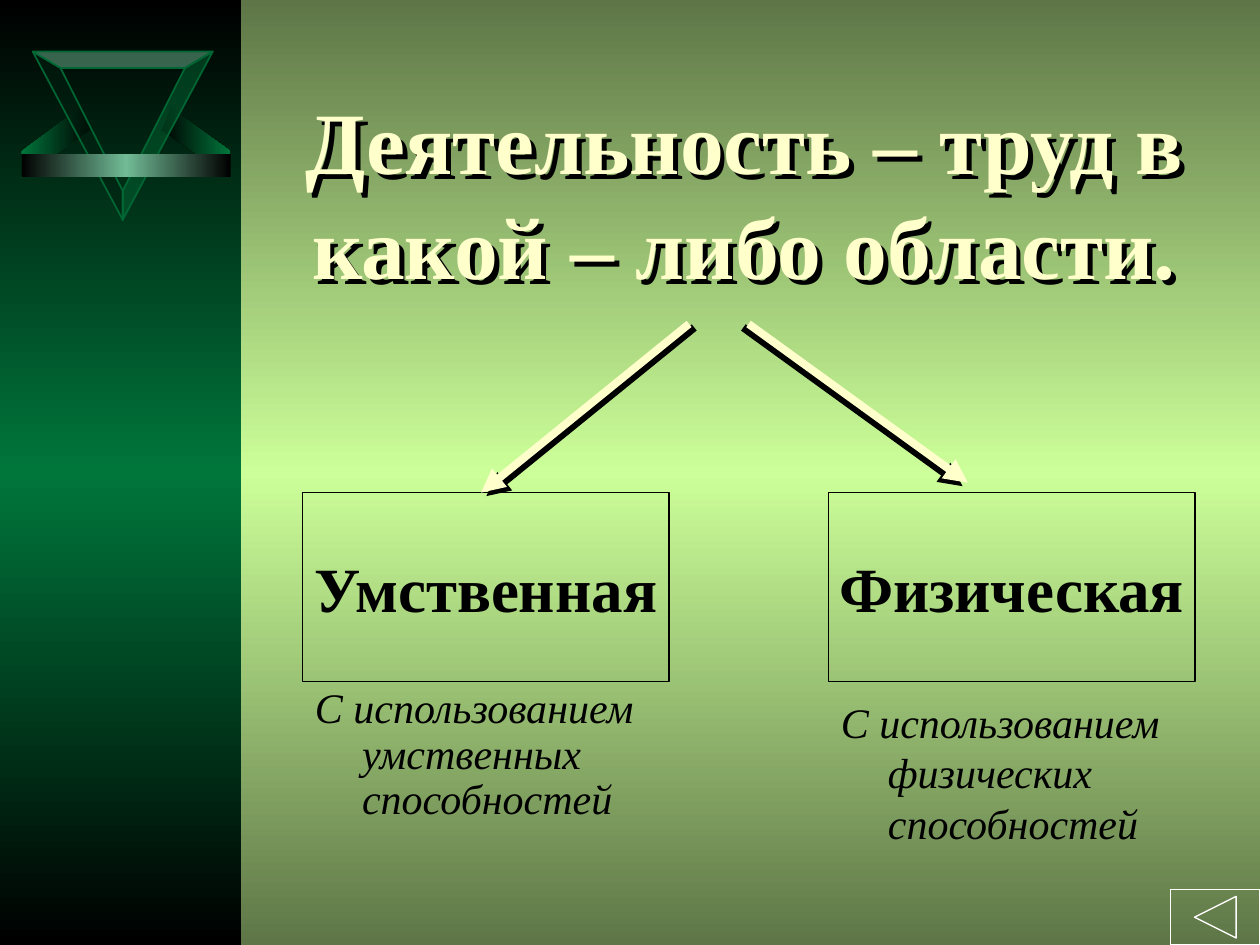
from lxml.etree import SubElement as Sub
from pptx import Presentation
from pptx.dml.color import RGBColor
from pptx.enum.shapes import MSO_CONNECTOR as Link, MSO_SHAPE as Preset
from pptx.enum.text import MSO_ANCHOR as Anchor, PP_ALIGN as Align
from pptx.oxml.ns import qn
from pptx.util import Cm, Pt

BLACK, CREAM, GREEN, MINT = "000000", "FFFFCC", "00763B", "71BB96"


def colour(value):
    """Turn a hex string into a colour."""
    return RGBColor.from_string(value)


def add_node(parent, tag, **values):
    """Append an XML element with the given attributes."""
    return Sub(parent, qn(tag), {key: str(value) for key, value in values.items()})


def apply(target, values):
    """Set attributes from a dict."""
    for name, value in values.items():
        setattr(target, name, value)


def set_gradient(fill, colours, angle):
    """Fill with evenly spaced gradient stops."""
    fill.gradient()
    gradient = fill._xPr.find(qn("a:gradFill"))
    for child in list(gradient):
        gradient.remove(child)
    stops = add_node(gradient, "a:gsLst")
    for index, value in enumerate(colours):
        stop = add_node(stops, "a:gs", pos=index * 100000 // (len(colours) - 1))
        add_node(stop, "a:srgbClr", val=value)
    add_node(gradient, "a:lin", ang=angle * 60000, scaled=0)


def set_line(shape, value=None, width=0.75):
    """Give a shape an outline, or none, and no shadow."""
    shape.shadow.inherit = False
    if value:
        shape.line.color.rgb = colour(value)
        shape.line.width = Pt(width)
    else:
        shape.line.fill.background()


def add_shadow(shape, distance, angle):
    """Give a shape a hard black shadow."""
    effects = add_node(shape._element.spPr, "a:effectLst")
    shadow = add_node(effects, "a:outerShdw", blurRad=0, dist=Pt(distance),
                      dir=angle * 60000, algn="ctr", rotWithShape=0)
    add_node(shadow, "a:srgbClr", val=BLACK)


def write(shape, text, frame_format, para_format, font_format, value=BLACK):
    """Write one formatted paragraph."""
    apply(shape.text_frame, frame_format)
    para = shape.text_frame.paragraphs[0]
    apply(para, para_format)
    span = para.add_run()
    span.text = text
    apply(span.font, {"name": "Times New Roman", **font_format})
    span.font.color.rgb = colour(value)


def add_box(page, preset, left, top, width, height):
    """Add a preset shape with lengths in centimetres."""
    return page.shapes.add_shape(preset, Cm(left), Cm(top), Cm(width), Cm(height))


def add_facet(page, left, top, points):
    """Add a closed outline, its points in hundredths of a centimetre."""
    corners = [(round(left * 100) + x, round(top * 100) + y) for x, y in points]
    builder = page.shapes.build_freeform(*corners[0], scale=Cm(0.01))
    builder.add_line_segments(corners[1:], close=True)
    return builder.convert_to_shape()


def mirror(points, span):
    """Flip points left to right within a span."""
    return [(span - x, y) for x, y in points]


def add_emblem(page, left, top, width):
    """Draw the bevelled triangle with its wings and bar."""
    wing = [(422, 201), (422, 254), (282, 157), (282, 163), (302, 114)]
    side = [(205, 340), (205, 282), (79, 33), (23, 0)]
    rim = [(23, 0), (79, 33), (330, 33), (386, 0)]
    wings = [(wing, (BLACK, GREEN)), (mirror(wing, 422), (GREEN, BLACK))]
    for points, colours in wings:
        facet = add_facet(page, left, top, points)
        set_gradient(facet.fill, colours, 0)
        set_line(facet)
    bevels = [(side, "002010"), (rim, MINT), (mirror(side, 409), "006633")]
    for points, value in bevels:
        facet = add_facet(page, left, top, points)
        facet.fill.solid()
        facet.fill.fore_color.rgb = colour(value)
        tint = facet._element.spPr.find(qn("a:solidFill"))[0]
        add_node(tint, "a:alpha", val=50000)
        set_line(facet, "006633", 1)
    bar = add_box(page, Preset.RECTANGLE, left, top + 2.06, width, 0.48)
    set_gradient(bar.fill, (BLACK, MINT, BLACK), 0)
    set_line(bar)


def add_sidebar(page, left, top, width, height):
    """Draw the dark side band with its emblem."""
    band = add_box(page, Preset.RECTANGLE, left, top, width, height)
    set_gradient(band.fill, (BLACK, GREEN, BLACK), 90)
    set_line(band)
    add_emblem(page, left + 0.43, top + 1.04, 4.22)


def add_title(page, left, top, width, height):
    """Write the shadowed heading."""
    box = page.shapes.add_textbox(Cm(left), Cm(top), Cm(width), Cm(height))
    write(box, "Деятельность – труд в какой – либо области.",
          {"word_wrap": True, "vertical_anchor": Anchor.MIDDLE},
          {"alignment": Align.CENTER}, {"size": Pt(50), "bold": True}, CREAM)
    add_shadow(box, 4, 45)


def add_kind(page, left, top, width, height, name, caption, gap, spacing):
    """Draw a kind of activity with its caption below."""
    frame = add_box(page, Preset.RECTANGLE, left, top, width, height)
    frame.fill.background()
    set_line(frame, BLACK)
    write(frame, name, {"word_wrap": False, "vertical_anchor": Anchor.MIDDLE},
          {"alignment": Align.CENTER}, {"size": Pt(36), "bold": True})
    note = page.shapes.add_textbox(Cm(left), Cm(top + height + gap), Cm(width), Cm(3.3))
    write(note, caption, {"word_wrap": True, "margin_top": Cm(0.12)},
          {"line_spacing": spacing}, {"size": Pt(24), "italic": True})
    props = note.text_frame.paragraphs[0]._p.get_or_add_pPr()
    props.set("marL", str(Cm(0.95)))
    props.set("indent", str(-Cm(0.95)))


def add_arrow(page, start, end, angle):
    """Draw a shadowed arrow between two points."""
    arrow = page.shapes.add_connector(Link.STRAIGHT, *map(Cm, start + end))
    arrow.line.color.rgb = colour(CREAM)
    arrow.line.width = Pt(4.5)
    add_node(arrow.line._get_or_add_ln(), "a:tailEnd", type="triangle")
    add_shadow(arrow, 3.6, angle)


def add_back_button(page, left, top, width, height):
    """Draw the outlined back button."""
    button = add_box(page, Preset.ACTION_BUTTON_BACK_OR_PREVIOUS, left, top, width, height)
    button.fill.background()
    set_line(button, "FFFFFF")


def main():
    """Build and save the deck."""
    deck = Presentation()
    deck.slide_width, deck.slide_height = Cm(25.4), Cm(19.05)
    page = deck.slides.add_slide(deck.slide_layouts[6])
    set_gradient(page.background.fill, ("5E7647", "CCFF99", "5E7647"), 90)
    add_sidebar(page, 0, 0, 4.86, 19.05)
    add_title(page, 5.3, 0.62, 19.41, 6.5)
    add_kind(page, 6.1, 9.93, 7.39, 3.81, "Умственная",
             "С использованием умственных способностей", 0, 0.9)
    add_kind(page, 16.7, 9.93, 7.39, 3.81, "Физическая",
             "С использованием физических способностей", 0.18, 1.0)
    add_arrow(page, (13.89, 6.53), (9.7, 9.93), 34)
    add_arrow(page, (15.09, 6.53), (19.51, 9.73), 146)
    add_back_button(page, 23.6, 17.93, 1.8, 1.12)
    deck.save("out.pptx")


if __name__ == "__main__":
    main()
